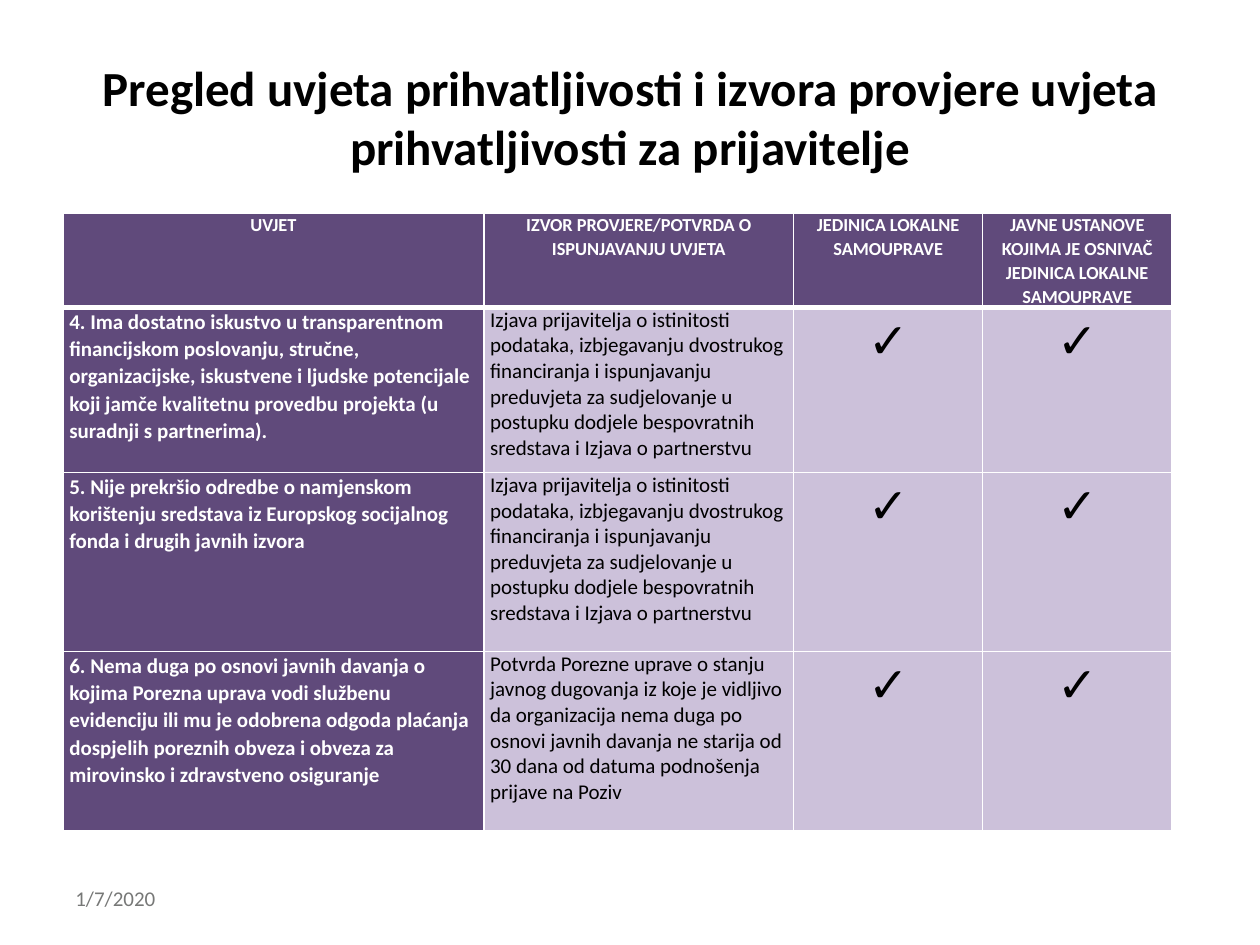
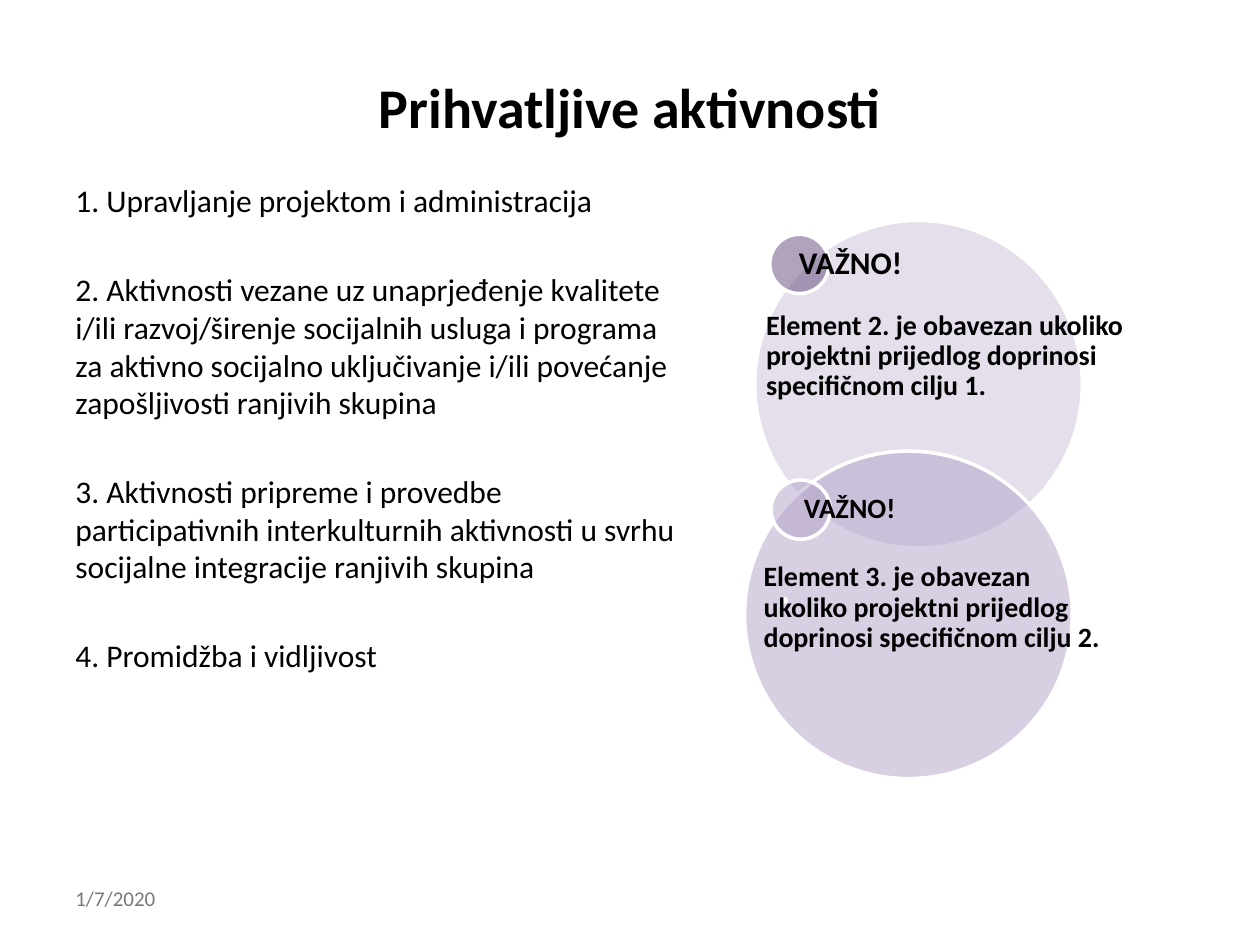
from dataclasses import dataclass

from lxml import etree
from pptx import Presentation
from pptx.dml.color import RGBColor
from pptx.enum.shapes import MSO_SHAPE as Shape
from pptx.enum.text import MSO_ANCHOR as Anchor, PP_ALIGN as Align
from pptx.oxml.ns import qn
from pptx.util import Inches, Pt


@dataclass(frozen=True)
class Theme:
    font: str = "Calibri"
    black: str = "000000"
    white: str = "FFFFFF"
    grey: str = "777877"
    purple: str = "604A7B"
    mid_purple: str = "B3A2C7"
    light_purple: str = "CCC1DA"
    blue: str = "4F81BD"
    title_size: float = 32
    long_title_size: float = 28
    body_size: float = 18
    note_size: float = 16
    cell_size: float = 12
    header_size: float = 10.5
    check_size: float = 28


THEME = Theme()
DATE = "1/7/2020"
CHECK = "✓"

# Table content
HEADERS = [
    "UVJET",
    "IZVOR PROVJERE/POTVRDA O ISPUNJAVANJU UVJETA",
    "JEDINICA LOKALNE SAMOUPRAVE",
    "JAVNE USTANOVE KOJIMA JE OSNIVAČ JEDINICA LOKALNE SAMOUPRAVE",
]
STATEMENT = (
    "Izjava prijavitelja o istinitosti podataka, izbjegavanju dvostrukog "
    "financiranja i ispunjavanju preduvjeta za sudjelovanje u postupku "
    "dodjele bespovratnih sredstava i Izjava o partnerstvu"
)
CONDITIONS = [
    ("4. Ima dostatno iskustvo u transparentnom financijskom poslovanju, "
     "stručne, organizacijske, iskustvene i ljudske potencijale koji jamče "
     "kvalitetnu provedbu projekta (u suradnji s partnerima).", STATEMENT),
    ("5. Nije prekršio odredbe o namjenskom korištenju sredstava iz Europskog "
     "socijalnog fonda i drugih javnih izvora", STATEMENT),
    ("6. Nema duga po osnovi javnih davanja o kojima Porezna uprava vodi "
     "službenu evidenciju ili mu je odobrena odgoda plaćanja dospjelih "
     "poreznih obveza i obveza za mirovinsko i zdravstveno osiguranje",
     "Potvrda Porezne uprave o stanju javnog dugovanja iz koje je vidljivo da "
     "organizacija nema duga po osnovi javnih davanja ne starija od 30 dana "
     "od datuma podnošenja prijave na Poziv"),
]
COLUMN_WIDTHS = [3.34, 2.46, 1.5, 1.5]
ROW_HEIGHTS = [0.75, 1.31, 1.42, 1.42]

# Activity content
ACTIVITIES = [
    "1. Upravljanje projektom i administracija",
    "2. Aktivnosti vezane uz unaprjeđenje kvalitete i/ili razvoj/širenje "
    "socijalnih usluga i programa za aktivno socijalno uključivanje i/ili "
    "povećanje zapošljivosti ranjivih skupina",
    "3. Aktivnosti pripreme i provedbe participativnih interkulturnih "
    "aktivnosti u svrhu socijalne integracije ranjivih skupina",
    "4. Promidžba i vidljivost",
]


class Deck:
    """Holds the theme, the presentation and the current slide."""

    def __init__(self, theme):
        self.theme = theme
        self.deck = Presentation()
        self.deck.slide_width, self.deck.slide_height = Inches(10), Inches(7.5)
        self.page = None

    def add_page(self, title, title_size, title_height):
        self.page = self.deck.slides.add_slide(self.deck.slide_layouts[6])
        self.text((0.5, 6.98, 2.33, 0.4), [DATE], self.theme.cell_size,
                  color=self.theme.grey)
        self.text((0.5, 0.3, 9, title_height), [title], title_size, bold=True,
                  align=Align.CENTER, anchor=Anchor.MIDDLE)

    def add_span(self, para, content, size, color, bold=False,
                 align=Align.LEFT, spacing=1.0):
        para.alignment = align
        para.line_spacing = spacing
        span = para.add_run()
        span.text = content
        font = span.font
        font.name, font.size, font.bold = self.theme.font, Pt(size), bold
        font.color.rgb = RGBColor.from_string(color)

    def text(self, place, paragraphs, size, color=None, bold=False,
             align=Align.LEFT, anchor=Anchor.TOP, spacing=1.0, gap=0,
             insets=(0.1, 0.05)):
        box = self.page.shapes.add_textbox(*map(Inches, place))
        frame = box.text_frame
        frame.word_wrap = True
        frame.vertical_anchor = anchor
        frame.margin_left = frame.margin_right = Inches(insets[0])
        frame.margin_top = frame.margin_bottom = Inches(insets[1])
        for index, content in enumerate(paragraphs):
            para = frame.add_paragraph() if index else frame.paragraphs[0]
            if index:
                para.space_before = Pt(gap)
            self.add_span(para, content, size, color or self.theme.black, bold,
                          align, spacing)

    def circle(self, left, top, diameter, color):
        """Half transparent circle with a white outline."""
        shape = self.page.shapes.add_shape(
            Shape.OVAL, *map(Inches, (left, top, diameter, diameter)))
        shape.shadow.inherit = False
        shape.fill.solid()
        shape.fill.fore_color.rgb = RGBColor.from_string(color)
        tint = shape.fill._xPr.find(qn("a:solidFill"))[0]
        etree.SubElement(tint, qn("a:alpha"), val="50000")
        shape.line.color.rgb = RGBColor.from_string(self.theme.white)
        shape.line.width = Pt(2)

    def note(self, place, content, size):
        self.text(place, [content], size, bold=True, anchor=Anchor.MIDDLE,
                  spacing=0.9, insets=(0, 0.02))

    def borders(self, cell, top, bottom):
        properties = cell._tc.get_or_add_tcPr()
        widths = {"a:lnL": 1, "a:lnR": 1, "a:lnT": top, "a:lnB": bottom}
        for position, (side, width) in enumerate(widths.items()):
            line = etree.Element(qn(side), w=str(Pt(width)))
            fill = etree.SubElement(line, qn("a:solidFill"))
            etree.SubElement(fill, qn("a:srgbClr"), val=self.theme.white)
            properties.insert(position, line)

    def cell(self, cell, content, size, dark, align=Align.LEFT, spacing=1.07,
             top=1, bottom=1):
        theme = self.theme
        cell.margin_left = cell.margin_right = Inches(0.05)
        cell.margin_top = cell.margin_bottom = 0
        cell.fill.solid()
        cell.fill.fore_color.rgb = RGBColor.from_string(
            theme.purple if dark else theme.light_purple)
        self.borders(cell, top, bottom)
        self.add_span(cell.text_frame.paragraphs[0], content, size,
                      theme.white if dark else theme.black, dark, align,
                      spacing)

    def conditions_table(self, left, top):
        theme = self.theme
        size = sum(COLUMN_WIDTHS), sum(ROW_HEIGHTS)
        table = self.page.shapes.add_table(
            len(ROW_HEIGHTS), len(COLUMN_WIDTHS),
            *map(Inches, (left, top, *size))).table
        for column, width in zip(table.columns, COLUMN_WIDTHS):
            column.width = Inches(width)
        for row, height in zip(table.rows, ROW_HEIGHTS):
            row.height = Inches(height)
        for index, header in enumerate(HEADERS):
            self.cell(table.cell(0, index), header, theme.header_size, True,
                      Align.CENTER, bottom=3)
        for index, (condition, source) in enumerate(CONDITIONS, 1):
            edge = 3 if index == 1 else 1
            self.cell(table.cell(index, 0), condition, theme.cell_size, True,
                      top=edge)
            self.cell(table.cell(index, 1), source, theme.cell_size, False,
                      spacing=1.0, top=edge)
            for column in (2, 3):
                self.cell(table.cell(index, column), CHECK, theme.check_size,
                          False, Align.CENTER, top=edge)


def main():
    deck = Deck(THEME)

    # Eligibility conditions
    deck.add_page("Pregled uvjeta prihvatljivosti i izvora provjere uvjeta "
                  "prihvatljivosti za prijavitelje", THEME.long_title_size, 1.25)
    deck.conditions_table(0.5, 1.69)

    # Eligible activities
    deck.add_page("Prihvatljive aktivnosti", THEME.title_size, 1.09)
    deck.text((0.5, 1.39, 5.01, 5.31), ACTIVITIES, THEME.body_size, gap=29)

    # Note on element 2
    deck.circle(5.99, 1.75, 2.6, THEME.light_purple)
    deck.circle(6.11, 1.86, 0.47, THEME.purple)
    deck.note((6.34, 1.86, 2.5, 0.47), "VAŽNO!", THEME.body_size)
    deck.note((6.08, 2.12, 2.86, 1.42), "Element 2. je obavezan ukoliko "
              "projektni prijedlog doprinosi specifičnom cilju 1.",
              THEME.note_size)

    # Note on element 3
    deck.circle(5.91, 3.58, 2.6, THEME.mid_purple)
    deck.circle(6.12, 3.81, 0.47, THEME.mid_purple)
    deck.note((6.38, 3.81, 2.5, 0.47), "VAŽNO!", THEME.note_size)
    deck.circle(6.21, 4.75, 0.03, THEME.blue)
    deck.note((6.06, 3.99, 2.82, 1.67), "Element 3. je obavezan ukoliko "
              "projektni prijedlog doprinosi specifičnom cilju 2.",
              THEME.note_size)

    deck.deck.save("out.pptx")


if __name__ == "__main__":
    main()
